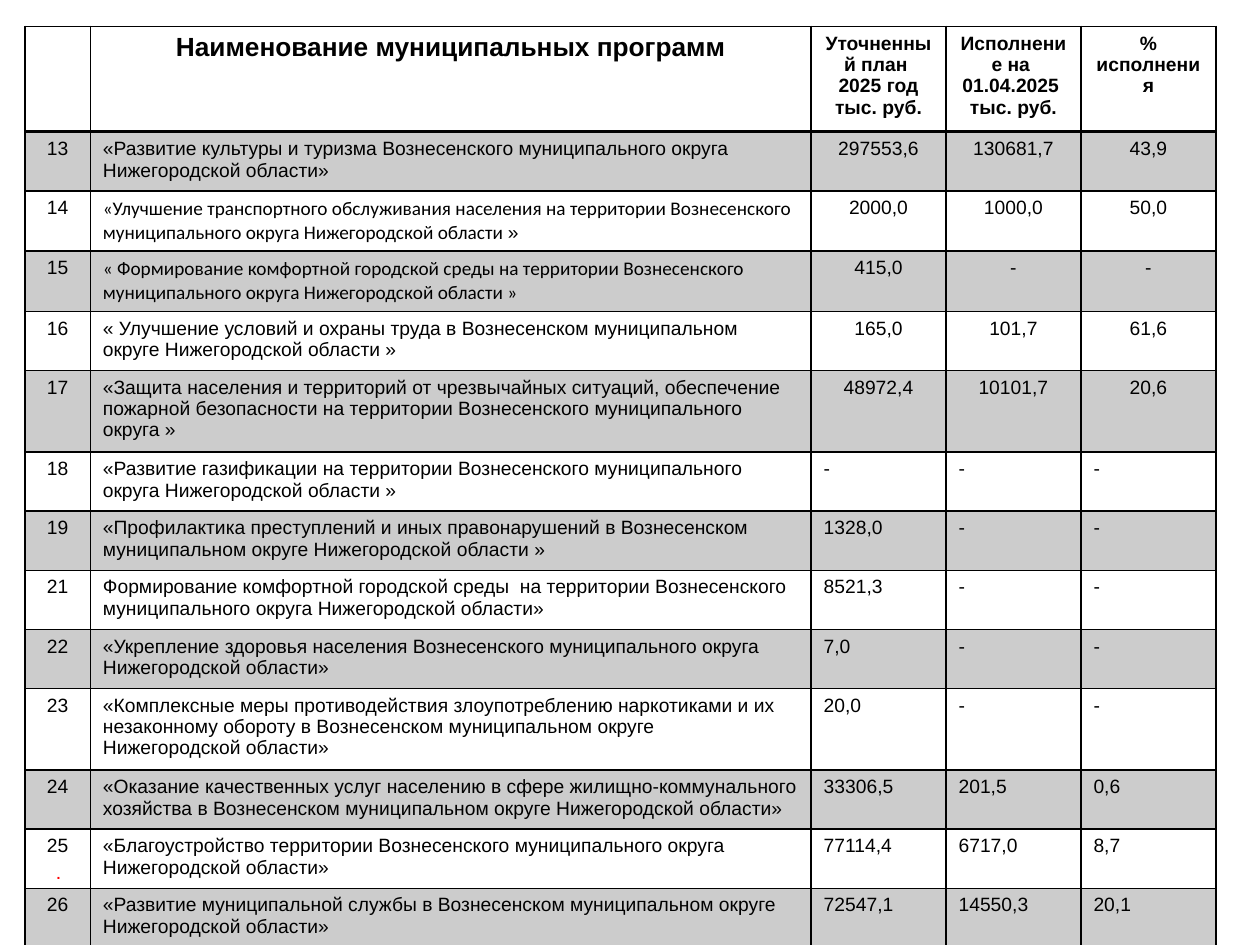
from dataclasses import dataclass

from lxml import etree
from pptx import Presentation
from pptx.dml.color import RGBColor
from pptx.enum.text import MSO_AUTO_SIZE, PP_ALIGN
from pptx.oxml.ns import qn
from pptx.util import Cm, Pt

LEFT = PP_ALIGN.LEFT
CENTER = PP_ALIGN.CENTER
FIT_SHAPE = MSO_AUTO_SIZE.SHAPE_TO_FIT_TEXT
BLACK = "000000"
RED = "FF0000"
MAIN_FONT = "Arial"
ALTERNATE_FONT = "Calibri"
COLUMN_WIDTHS = (1.32, 14.53, 2.72, 2.72, 2.72)
HEADER_HEIGHT, TWO_LINES, THREE_LINES, LAST_HEIGHT = 2.13, 1.19, 1.65, 1.37
HEADINGS = (
    "",
    "Наименование муниципальных программ",
    "Уточненный план  2025 год\nтыс. руб.",
    "Исполнение на  01.04.2025 \nтыс. руб.",
    "% исполнения",
)


@dataclass(frozen=True)
class Program:
    number: str
    title: str
    plan: str
    done: str = "-"
    percent: str = "-"
    height: float = TWO_LINES
    align: PP_ALIGN = LEFT
    font: str = MAIN_FONT
    closing: str = ""


PROGRAMS = (
    Program("13", "«Развитие культуры и туризма Вознесенского муниципального округа Нижегородской области»",
            "297553,6", "130681,7", "43,9", align=CENTER),
    Program("14", "«Улучшение транспортного обслуживания населения на территории Вознесенского "
            "муниципального округа Нижегородской области ",
            "2000,0", "1000,0", "50,0", align=CENTER, font=ALTERNATE_FONT, closing="»"),
    Program("15", "« Формирование комфортной городской среды на территории Вознесенского "
            "муниципального округа Нижегородской области »",
            "415,0", align=CENTER, font=ALTERNATE_FONT),
    Program("16", "« Улучшение условий и охраны труда в Вознесенском муниципальном округе Нижегородской области »",
            "165,0", "101,7", "61,6", align=CENTER),
    Program("17", "«Защита населения и территорий от чрезвычайных ситуаций, обеспечение пожарной "
            "безопасности на территории Вознесенского муниципального округа »",
            "48972,4", "10101,7", "20,6", height=THREE_LINES, align=CENTER),
    Program("18", "«Развитие газификации на территории Вознесенского муниципального округа Нижегородской области »",
            "-"),
    Program("19", "«Профилактика преступлений и иных правонарушений в Вознесенском "
            "муниципальном округе Нижегородской области »", "1328,0"),
    Program("21", "Формирование комфортной городской среды  на территории Вознесенского "
            "муниципального округа Нижегородской области»", "8521,3"),
    Program("22", "«Укрепление здоровья населения Вознесенского муниципального округа Нижегородской области»",
            "7,0"),
    Program("23", "«Комплексные меры противодействия злоупотреблению наркотиками и их незаконному "
            "обороту в Вознесенском муниципальном округе Нижегородской области»",
            "20,0", height=THREE_LINES),
    Program("24", "«Оказание качественных услуг населению в сфере жилищно-коммунального хозяйства "
            "в Вознесенском муниципальном округе Нижегородской области»",
            "33306,5", "201,5", "0,6"),
    Program("25", "«Благоустройство территории Вознесенского муниципального округа Нижегородской области»",
            "77114,4", "6717,0", "8,7"),
    Program("26", "«Развитие муниципальной службы в Вознесенском муниципальном округе Нижегородской области»",
            "72547,1", "14550,3", "20,1", height=LAST_HEIGHT),
)


def rgb(color: str) -> RGBColor:
    return RGBColor.from_string(color)


def write(paragraph, text: str, *, size: float = 11, bold: bool = False,
          font: str = MAIN_FONT, color: str = BLACK, align: PP_ALIGN = LEFT) -> None:
    paragraph.alignment = align
    run = paragraph.add_run()
    run.text = text
    run.font.size = Pt(size)
    run.font.bold = bold
    run.font.name = font
    run.font.color.rgb = rgb(color)


def add_border(properties, side: str, width: float) -> None:
    line = etree.SubElement(properties, qn(f"a:{side}"), w=str(Pt(width)))
    fill = etree.SubElement(line, qn("a:solidFill"))
    etree.SubElement(fill, qn("a:srgbClr"), val=BLACK)


def style_cell(cell, shaded: bool, top: float, bottom: float) -> None:
    properties = cell._tc.get_or_add_tcPr()
    for side, width in (("lnL", 1), ("lnR", 1), ("lnT", top), ("lnB", bottom)):
        add_border(properties, side, width)
    if shaded:
        cell.fill.solid()
        cell.fill.fore_color.rgb = rgb(BLACK)
        shade = properties.find(qn("a:solidFill")).find(qn("a:srgbClr"))
        etree.SubElement(shade, qn("a:alpha"), val="20000")
    else:
        cell.fill.background()


def fill_header(table) -> None:
    table.rows[0].height = Cm(HEADER_HEIGHT)
    for column, heading in enumerate(HEADINGS):
        cell = table.cell(0, column)
        style_cell(cell, False, 1, 2)
        for index, line in enumerate(heading.split("\n") if heading else ()):
            frame = cell.text_frame
            paragraph = frame.add_paragraph() if index else frame.paragraphs[0]
            write(paragraph, line, size=15 if column == 1 else 11, bold=True, align=CENTER)


def fill_program(table, row: int, program: Program) -> None:
    table.rows[row].height = Cm(program.height)
    entries = (
        (program.number, CENTER, MAIN_FONT),
        (program.title, LEFT, program.font),
        (program.plan, program.align, MAIN_FONT),
        (program.done, program.align, MAIN_FONT),
        (program.percent, program.align, MAIN_FONT),
    )
    for column, (text, align, font) in enumerate(entries):
        cell = table.cell(row, column)
        style_cell(cell, row % 2 == 1, 2 if row == 1 else 1, 1)
        write(cell.text_frame.paragraphs[0], text, font=font, align=align)
    if program.closing:
        write(table.cell(row, 1).text_frame.paragraphs[0], program.closing)


def main() -> None:
    presentation = Presentation()
    presentation.slide_width, presentation.slide_height = Cm(25.4), Cm(19.05)
    slide = presentation.slides.add_slide(presentation.slide_layouts[6])

    height = HEADER_HEIGHT + sum(program.height for program in PROGRAMS)
    table = slide.shapes.add_table(
        len(PROGRAMS) + 1, len(COLUMN_WIDTHS),
        Cm(0.5), Cm(0.53), Cm(sum(COLUMN_WIDTHS)), Cm(height),
    ).table
    table.first_row = table.horz_banding = False
    for column, width in zip(table.columns, COLUMN_WIDTHS):
        column.width = Cm(width)
    fill_header(table)
    for row, program in enumerate(PROGRAMS, start=1):
        fill_program(table, row, program)

    mark = slide.shapes.add_textbox(Cm(0.89), Cm(17.32), Cm(0.79), Cm(1.37)).text_frame
    mark.word_wrap = True
    mark.auto_size = FIT_SHAPE
    write(mark.paragraphs[0], ".", size=8, bold=True, color=RED)

    presentation.save("out.pptx")


if __name__ == "__main__":
    main()
